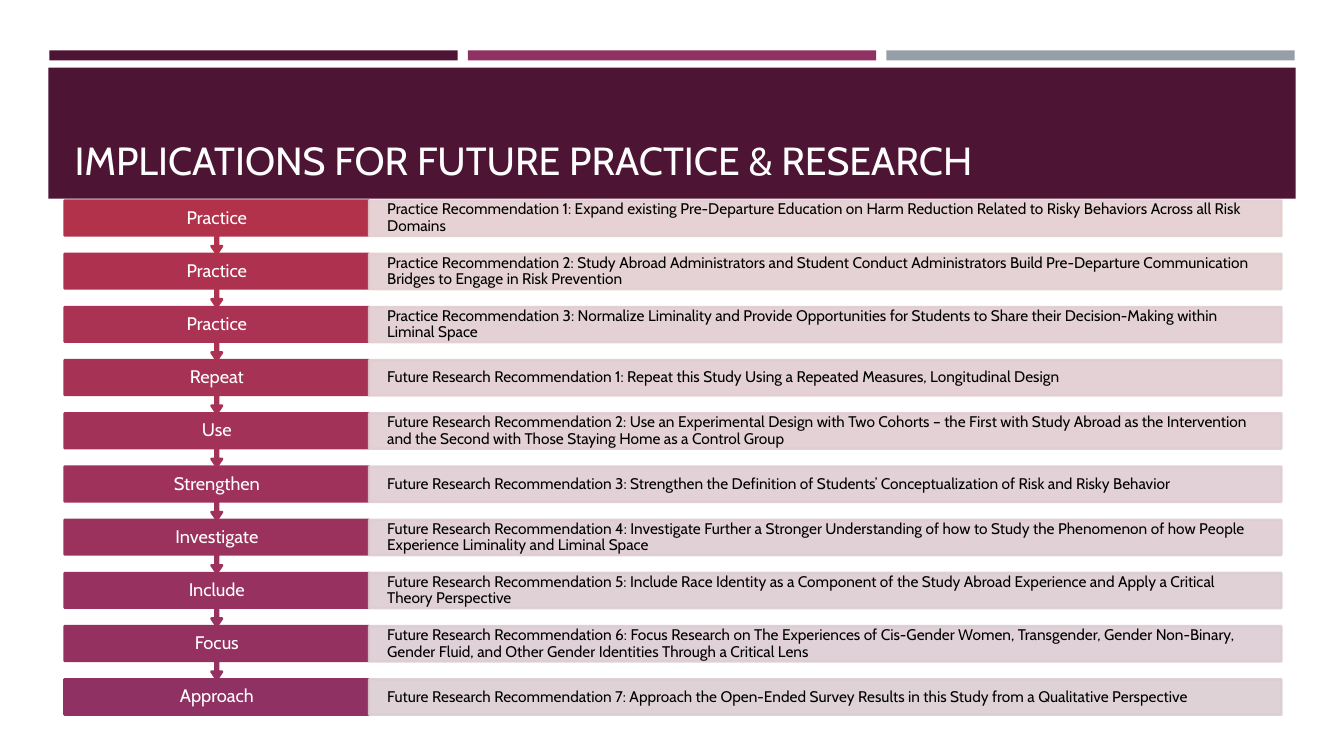
from dataclasses import dataclass

from lxml import etree
from pptx import Presentation
from pptx.dml.color import RGBColor
from pptx.enum.shapes import MSO_SHAPE
from pptx.enum.text import MSO_ANCHOR, PP_ALIGN
from pptx.oxml.ns import qn
from pptx.util import Inches, Pt

RECT, CALLOUT = MSO_SHAPE.RECTANGLE, MSO_SHAPE.UP_ARROW_CALLOUT
MIDDLE, BOTTOM = MSO_ANCHOR.MIDDLE, MSO_ANCHOR.BOTTOM
LEFT, CENTER = PP_ALIGN.LEFT, PP_ALIGN.CENTER
TITLE_ONLY = 5


@dataclass(frozen=True)
class Theme:
    font: str = "Cabin"
    plum: str = "4D1434"
    berry: str = "903163"
    gray: str = "969FA7"
    title_text: str = "FFFEFF"
    label_text: str = "FFFFFF"
    detail_text: str = "000000"
    title_size: int = 28
    label_size: int = 13
    detail_size: int = 11
    line_width: float = 1.75
    bar_opacity: int = 90


# Label, recommendation, label colour, bar colour
ROWS = [
    ("Practice", "Practice Recommendation 1: Expand existing Pre-Departure Education on Harm "
     "Reduction Related to Risky Behaviors Across all Risk Domains", "B2324B", "E4CED0"),
    ("Practice", "Practice Recommendation 2: Study Abroad Administrators and Student Conduct "
     "Administrators Build Pre-Departure Communication Bridges to Engage in Risk Prevention",
     "AE324F", "E3CED0"),
    ("Practice", "Practice Recommendation 3: Normalize Liminality and Provide Opportunities for "
     "Students to Share their Decision-Making within Liminal Space", "AA3252", "E2CDD1"),
    ("Repeat", "Future Research Recommendation 1: Repeat this Study Using a Repeated Measures, "
     "Longitudinal Design", "A63256", "E1CDD1"),
    ("Use", "Future Research Recommendation 2: Use an Experimental Design with Two Cohorts – the "
     "First with Study Abroad as the Intervention and the Second with Those Staying Home as a "
     "Control Group", "A33258", "E0CDD2"),
    ("Strengthen", "Future Research Recommendation 3: Strengthen the Definition of Students’ "
     "Conceptualization of Risk and Risky Behavior", "9F325B", "DFCDD2"),
    ("Investigate", "Future Research Recommendation 4: Investigate Further a Stronger "
     "Understanding of how to Study the Phenomenon of how People Experience Liminality and "
     "Liminal Space", "9B325D", "DECDD2"),
    ("Include", "Future Research Recommendation 5: Include Race Identity as a Component of the "
     "Study Abroad Experience and Apply a Critical Theory Perspective", "973160", "DDCDD2"),
    ("Focus", "Future Research Recommendation 6: Focus Research on The Experiences of Cis-Gender "
     "Women, Transgender, Gender Non-Binary, Gender Fluid, and Other Gender Identities Through "
     "a Critical Lens", "943161", "DCCDD3"),
    ("Approach", "Future Research Recommendation 7: Approach the Open-Ended Survey Results in "
     "this Study from a Qualitative Perspective", "903163", "DBCED3"),
]


class SlideBuilder:
    def __init__(self, prs, theme):
        self.theme = theme
        self.slide = prs.slides.add_slide(prs.slide_layouts[TITLE_ONLY])

    def set_text(self, sp, text, size, color, align=LEFT, anchor=MIDDLE,
                 insets=(0.1, 0.05), spacing=0.9):
        tf = sp.text_frame
        tf.word_wrap = True
        tf.vertical_anchor = anchor
        tf.margin_left = tf.margin_right = Inches(insets[0])
        tf.margin_top = tf.margin_bottom = Inches(insets[1])
        p = tf.paragraphs[0]
        p.alignment = align
        p.line_spacing = spacing
        r = p.add_run()
        r.text = text
        r.font.name = self.theme.font
        r.font.size = Pt(size)
        r.font.color.rgb = RGBColor.from_string(color)

    def title(self, text, x, y, w, h):
        sp = self.slide.shapes.title
        sp.left, sp.top, sp.width, sp.height = map(Inches, (x, y, w, h))
        self.set_text(sp, text, self.theme.title_size, self.theme.title_text, anchor=BOTTOM)
        # Bring the title in front of its band
        sp.element.getparent().append(sp.element)

    def block(self, kind, x, y, w, h, color, outlined=False, opacity=100):
        sp = self.slide.shapes.add_shape(kind, *map(Inches, (x, y, w, h)))
        sp.shadow.inherit = False
        sp.fill.solid()
        sp.fill.fore_color.rgb = RGBColor.from_string(color)
        if outlined:
            sp.line.color.rgb = RGBColor.from_string(color)
            sp.line.width = Pt(self.theme.line_width)
        else:
            sp.line.fill.background()
        if opacity < 100:
            for clr in sp.element.iter(qn("a:srgbClr")):
                etree.SubElement(clr, qn("a:alpha")).set("val", str(opacity * 1000))
        return sp

    def arrow_block(self, x, y, w, h, color):
        sp = self.block(CALLOUT, x, y, w, h, color, outlined=True)
        sp.rotation = 180
        for i, value in enumerate((0.05, 0.1, 0.15, 0.65)):
            sp.adjustments[i] = value

    def label(self, text, x, y, w, h):
        sp = self.slide.shapes.add_textbox(*map(Inches, (x, y, w, h)))
        self.set_text(sp, text, self.theme.label_size, self.theme.label_text,
                      align=CENTER, insets=(0.21, 0.1))

    def detail(self, text, x, y, w, h, color):
        sp = self.block(RECT, x, y, w, h, color, outlined=True,
                        opacity=self.theme.bar_opacity)
        self.set_text(sp, text, self.theme.detail_size, self.theme.detail_text,
                      insets=(0.18, 0.15))


def main():
    prs = Presentation()
    prs.slide_width, prs.slide_height = Inches(13.33), Inches(7.5)
    theme = Theme()
    s = SlideBuilder(prs, theme)

    # Header strips, band and title
    for i, color in enumerate((theme.plum, theme.berry, theme.gray)):
        s.block(RECT, 0.49 + i * 4.15, 0.5, 4.05, 0.1, color)
    s.block(RECT, 0.48, 0.67, 12.37, 1.3, theme.plum)
    s.title("IMPLICATIONS FOR FUTURE PRACTICE & RESEARCH", 0.64, 0.77, 12.06, 1.11)

    # Recommendation chain, built upwards so each arrow overlaps the row below
    left, top, last_top = 0.64, 1.99, 6.74
    label_w, detail_w, row_h, arrow_h = 3.02, 9.05, 0.35, 0.53
    last = len(ROWS) - 1
    pitch = (last_top - top) / last
    for i in range(last, -1, -1):
        label, detail, label_color, bar_color = ROWS[i]
        y = top + i * pitch
        if i == last:
            s.block(RECT, left, y, label_w, row_h, label_color, outlined=True)
        else:
            s.arrow_block(left, y, label_w, arrow_h, label_color)
        s.label(label, left, y, label_w, row_h)
        s.detail(detail, left + label_w, y, detail_w, row_h, bar_color)

    prs.save("out.pptx")


if __name__ == "__main__":
    main()
